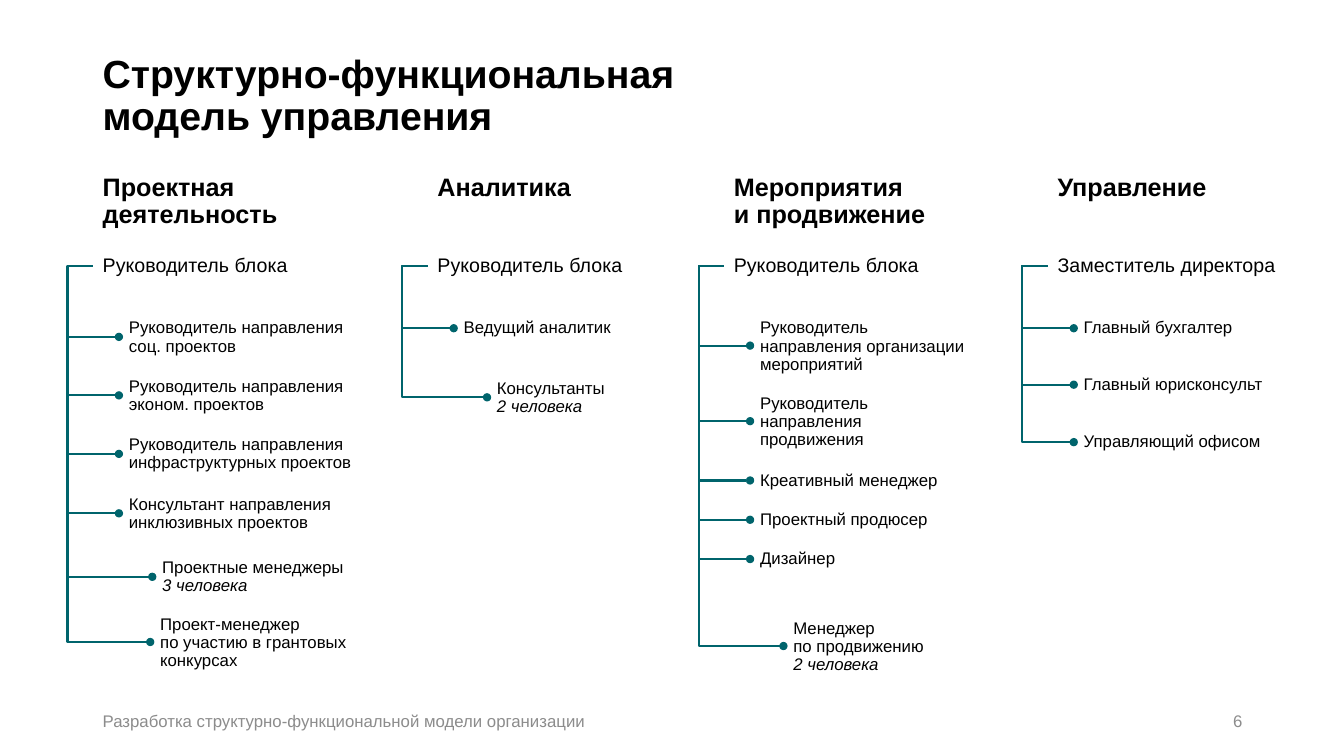
from lxml import etree
from pptx import Presentation
from pptx import util as u
from pptx.dml.color import RGBColor
from pptx.enum import shapes, text
from pptx.oxml.ns import qn

BLACK = RGBColor(0x00, 0x00, 0x00)
GREY = RGBColor(0x8C, 0x8C, 0x8C)
TEAL = RGBColor(0x00, 0x64, 0x6C)

TITLE = "Структурно-функциональная модель управления"
FOOTER = "Разработка структурно-функциональной модели организации"
PAGE_NUMBER = "6"

# Indents of the staff levels from the left edge of a block
LEAD, GRANT, STAFF = 0.26, 0.57, 0.59

# Block: left, heading, heading lines, head, head width, members
# Member: top, indent, width, line count, text, note in italics
BLOCKS = [
    (0.92, "Проектная деятельность", 2, "Руководитель блока", 2.38, [
        (3.12, LEAD, 2.42, 2, "Руководитель направления\nсоц. проектов", ""),
        (3.70, LEAD, 2.42, 2, "Руководитель направления эконом. проектов", ""),
        (4.28, LEAD, 2.53, 2, "Руководитель направления инфраструктурных проектов", ""),
        (4.87, LEAD, 2.30, 2, "Консультант направления инклюзивных проектов", ""),
        (5.50, STAFF, 2.09, 2, "Проектные менеджеры", "3 человека"),
        (6.06, GRANT, 2.22, 3, "Проект-менеджер\nпо участию в грантовых конкурсах", ""),
    ]),
    (4.24, "Аналитика", 1, "Руководитель блока", 2.38, [
        (3.12, LEAD, 2.42, 1, "Ведущий аналитик", ""),
        (3.72, STAFF, 2.09, 2, "Консультанты", "2 человека"),
    ]),
    (7.18, "Мероприятия\nи продвижение", 2, "Руководитель блока", 2.38, [
        (3.12, LEAD, 2.30, 3, "Руководитель направления организации мероприятий", ""),
        (3.87, LEAD, 2.22, 3, "Руководитель направления продвижения", ""),
        (4.63, LEAD, 2.30, 1, "Креативный менеджер", ""),
        (5.02, LEAD, 2.30, 1, "Проектный продюсер", ""),
        (5.41, LEAD, 2.30, 1, "Дизайнер", ""),
        (6.10, STAFF, 2.09, 3, "Менеджер\nпо продвижению", "2 человека"),
    ]),
    (10.39, "Управление", 1, "Заместитель директора", 2.49, [
        (3.12, LEAD, 2.01, 1, "Главный бухгалтер", ""),
        (3.68, LEAD, 2.12, 1, "Главный юрисконсульт", ""),
        (4.25, LEAD, 2.01, 1, "Управляющий офисом", ""),
    ]),
]

HEADING_TOP, HEADING_WIDTH = 1.68, 2.38
HEAD_TOP = 2.49
TRUNK_TOP = 2.64
TRUNK_OFFSET = 0.25
PADDING = 0.1
LINE_PITCH = 0.9 * 1.15 / 72  # inches of height per point of text size


def text_height(lines, size):
    return PADDING + lines * size * LINE_PITCH


def add_text(page, left, top, width, height, words, size, note="", bold=False,
             color=BLACK, spacing=0.9, anchor=text.MSO_ANCHOR.TOP,
             align=text.PP_ALIGN.LEFT):
    box = page.shapes.add_textbox(*map(u.Inches, (left, top, width, height)))
    frame = box.text_frame
    frame.word_wrap = True
    frame.vertical_anchor = anchor
    para = frame.paragraphs[0]
    para.alignment = align
    para.line_spacing = spacing
    lines = [(line, False) for line in words.split("\n")]
    if note:
        lines.append((note, True))
    for index, (line, italic) in enumerate(lines):
        if index:
            para.add_line_break()
        span = para.add_run()
        span.text = line
        look = {"name": "Arial", "size": u.Pt(size), "bold": bold, "italic": italic}
        for key, value in look.items():
            setattr(span.font, key, value)
        span.font.color.rgb = color
    return box


def add_branch(page, left, indent, middle):
    """Elbow from the head of a block, round its trunk, to a member."""
    branch = page.shapes.add_connector(
        shapes.MSO_CONNECTOR.ELBOW,
        *map(u.Inches, (left, TRUNK_TOP, left + indent, middle)))
    branch.line.color.rgb = TEAL
    branch.line.width = u.Pt(1.5)
    properties = branch.element.spPr
    geometry = properties.find(qn("a:prstGeom"))
    guides = geometry.find(qn("a:avLst"))
    if guides is None:
        guides = etree.SubElement(geometry, qn("a:avLst"))
    bend = round(-TRUNK_OFFSET / indent * 100000)
    etree.SubElement(guides, qn("a:gd"), name="adj1", fmla=f"val {bend}")
    etree.SubElement(properties.find(qn("a:ln")), qn("a:tailEnd"), type="oval")
    etree.SubElement(properties, qn("a:effectLst"))


def add_block(page, left, heading, heading_lines, head, head_width, members):
    rows = [
        (left, HEADING_TOP, HEADING_WIDTH, heading_lines, heading, 18, "", True),
        (left, HEAD_TOP, head_width, 1, head, 14, "", False),
    ]
    for top, indent, width, lines, words, note in members:
        rows.append((left + indent, top, width, lines, words, 12, note, False))
        add_branch(page, left, indent, top + text_height(lines, 12) / 2)
    for x, top, width, lines, words, size, note, bold in rows:
        box = add_text(page, x, top, width, text_height(lines, size),
                       words, size, note, bold)
        box.text_frame.auto_size = text.MSO_AUTO_SIZE.SHAPE_TO_FIT_TEXT


def main():
    deck = Presentation()
    deck.slide_width, deck.slide_height = u.Inches(13.33), u.Inches(7.5)
    page = deck.slides.add_slide(deck.slide_layouts[6])
    middle = text.MSO_ANCHOR.MIDDLE
    add_text(page, 0.92, 0.4, 7.07, 1.12, TITLE, 28, bold=True, anchor=middle)
    for block in BLOCKS:
        add_block(page, *block)
    for left, width, words, align in (
            (0.92, 8, FOOTER, text.PP_ALIGN.LEFT),
            (9.42, 3, PAGE_NUMBER, text.PP_ALIGN.RIGHT)):
        add_text(page, left, 6.95, width, 0.4, words, 12, color=GREY,
                 spacing=1.0, anchor=middle, align=align)
    deck.save("out.pptx")


if __name__ == "__main__":
    main()
